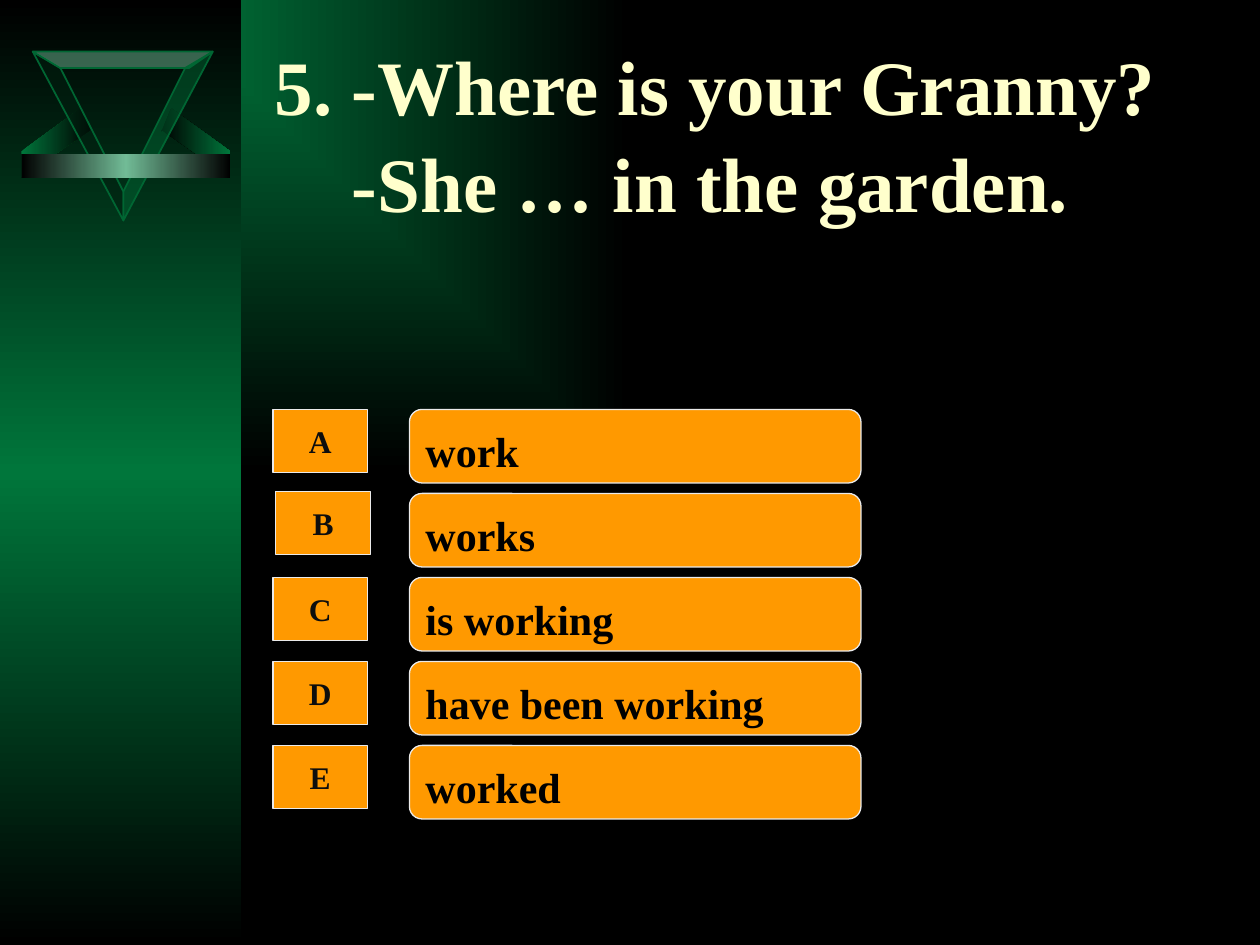
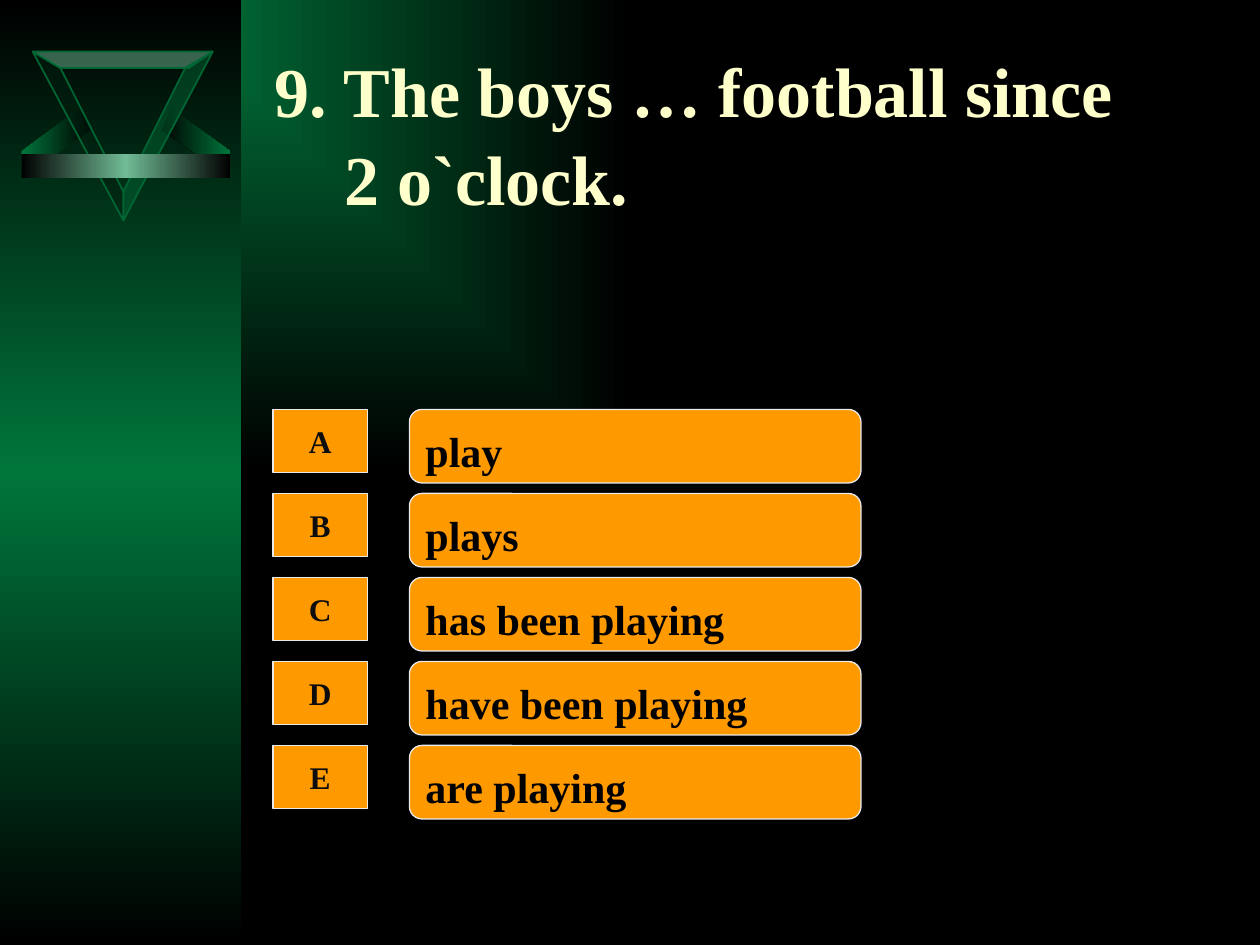
from lxml.etree import SubElement
from pptx import Presentation
from pptx.dml.color import RGBColor as RGB
from pptx.enum.shapes import MSO_SHAPE as SHAPE
from pptx.enum.text import MSO_ANCHOR as ANCHOR, PP_ALIGN as ALIGN
from pptx.oxml.ns import qn
from pptx.util import Pt

COLORS = {
    "black": "000000", "green": "00763B", "mint": "71BB96",
    "edge": "006633", "shade": "002010", "title": "FFFFCC",
    "orange": "FF9900", "outline": "EAEAEA", "letter": "0D0D0D",
}
FONT = "Times New Roman"
SLIDE_W, SLIDE_H = 720, 540
BAND_BOX = (0, 0, 138, SLIDE_H)
EMBLEM_BOX = (12.2, 29.5, 119.5, 96.5)
TITLE_BOX = (150, 18, 558, 114)
ANSWERS_BOX = (156, 234, 336, 234)
ROW_PITCH = 48

QUESTIONS = [
    {
        "lines": ["5. -Where is your Granny?", "-She … in the garden."],
        "size": 44,
        "answers": ["work", "works", "is working", "have been working", "worked"],
        "nudges": {"B": (1.6, -1)},
    },
    {
        "lines": ["9. The boys … football since", "2 o`clock."],
        "size": 40,
        "answers": ["play", "plays", "has been playing", "have been playing", "are playing"],
        "nudges": {},
    },
]


def rgb(name):
    return RGB.from_string(COLORS[name])


def set_gradient(fill, holder, names, angle=None):
    fill.gradient()
    grad = next(holder.iter(qn("a:gradFill")))
    for child in list(grad):
        grad.remove(child)
    stops = SubElement(grad, qn("a:gsLst"))
    for i, name in enumerate(names):
        stop = SubElement(stops, qn("a:gs"), pos=str(100000 * i // (len(names) - 1)))
        SubElement(stop, qn("a:srgbClr"), val=COLORS[name])
    if angle is None:
        corner = SubElement(grad, qn("a:path"), path="rect")
        SubElement(corner, qn("a:fillToRect"), r="100000", b="100000")
    else:
        SubElement(grad, qn("a:lin"), ang=str(angle * 60000), scaled="0")


def set_line(sp, name, width):
    sp.line.color.rgb = rgb(name)
    sp.line.width = Pt(width)


def add_preset(shapes, kind, x, y, w, h):
    sp = shapes.add_shape(kind, Pt(x), Pt(y), Pt(w), Pt(h))
    sp.shadow.inherit = False
    return sp


def add_gradient_bar(shapes, box, names, angle):
    sp = add_preset(shapes, SHAPE.RECTANGLE, *box)
    set_gradient(sp.fill, sp._element, names, angle)
    sp.line.fill.background()


def add_outline(shapes, box, points):
    corners = [(Pt(box[0] + x), Pt(box[1] + y)) for x, y in points]
    builder = shapes.build_freeform(*corners[0], scale=1.0)
    builder.add_line_segments(corners[1:], close=True)
    sp = builder.convert_to_shape()
    sp.shadow.inherit = False
    return sp


def add_run(p, text, size, color):
    r = p.add_run()
    r.text = text
    r.font.name = FONT
    r.font.size = Pt(size)
    r.font.bold = True
    r.font.color.rgb = rgb(color)


def add_emblem(s, box):
    x, y, w, h = box
    shapes = s.shapes.add_group_shape().shapes
    wing = [(w, 57), (w, 72), (79.9, 44.6), (79.9, 46), (85.7, 32.4)]
    mirrored = [(w - px, py) for px, py in wing]
    for points, names in [(wing, ("black", "green")), (mirrored, ("green", "black"))]:
        sp = add_outline(shapes, box, points)
        set_gradient(sp.fill, sp._element, names, 0)
        sp.line.fill.background()

    tip = [(58.3, h), (58.3, 80)]
    left, right = (6.5, 0), (109.4, 0)
    sides = [
        (tip + [(22.3, 9.4), left], "shade"),
        ([left, (22.3, 9.4), (95.8, 9.4), right], "mint"),
        (tip + [(93.6, 9.4), right], "edge"),
    ]
    for points, color in sides:
        sp = add_outline(shapes, box, points)
        sp.fill.solid()
        sp.fill.fore_color.rgb = rgb(color)
        clr = next(sp._element.iter(qn("a:srgbClr")))
        SubElement(clr, qn("a:alpha"), val="50000")
        set_line(sp, "edge", 1)
    add_gradient_bar(shapes, (x, y + 58.3, w, 13.7), ("black", "mint", "black"), 0)


def add_backdrop(s):
    set_gradient(s.background.fill, s._element, ("green", "black"))
    add_gradient_bar(s.shapes, BAND_BOX, ("black", "green", "black"), 90)
    add_emblem(s, EMBLEM_BOX)


def add_title(s, box, lines, size):
    tf = s.shapes.add_textbox(*map(Pt, box)).text_frame
    tf.word_wrap = True
    tf.vertical_anchor = ANCHOR.MIDDLE
    p = tf.paragraphs[0]
    p.line_spacing = 1.05
    hanging = Pt(size)
    pPr = p._p.get_or_add_pPr()
    pPr.set("marL", str(hanging))
    pPr.set("indent", str(-hanging))
    for i, line in enumerate(lines):
        if i:
            p.add_line_break()
        add_run(p, line, size, "title")


def add_button(s, kind, box, text, size, color, align):
    sp = add_preset(s.shapes, kind, *box)
    sp.fill.solid()
    sp.fill.fore_color.rgb = rgb("orange")
    set_line(sp, "outline", 0.75)
    tf = sp.text_frame
    tf.word_wrap = False
    tf.vertical_anchor = ANCHOR.MIDDLE
    p = tf.paragraphs[0]
    p.alignment = align
    add_run(p, text, size, color)
    return sp


def add_answers(s, box, answers, nudges):
    x, y, w, h = box
    for i, (letter, answer) in enumerate(zip("ABCDE", answers)):
        top = y + i * ROW_PITCH
        bar = add_button(s, SHAPE.ROUNDED_RECTANGLE, (x + 78, top, w - 78, 42),
                         answer, 24, "black", ALIGN.LEFT)
        bar.adjustments[0] = 0.17
        bar.text_frame.margin_top = Pt(8.4)
        dx, dy = nudges.get(letter, (0, 0))
        add_button(s, SHAPE.ACTION_BUTTON_CUSTOM, (x + dx, top + dy, 54, 36),
                   letter, 18, "letter", ALIGN.CENTER)


def add_question(prs, question):
    s = prs.slides.add_slide(prs.slide_layouts[6])
    add_backdrop(s)
    add_title(s, TITLE_BOX, question["lines"], question["size"])
    add_answers(s, ANSWERS_BOX, question["answers"], question["nudges"])


def main():
    prs = Presentation()
    prs.slide_width, prs.slide_height = Pt(SLIDE_W), Pt(SLIDE_H)
    for question in QUESTIONS:
        add_question(prs, question)
    prs.save("out.pptx")


if __name__ == "__main__":
    main()
